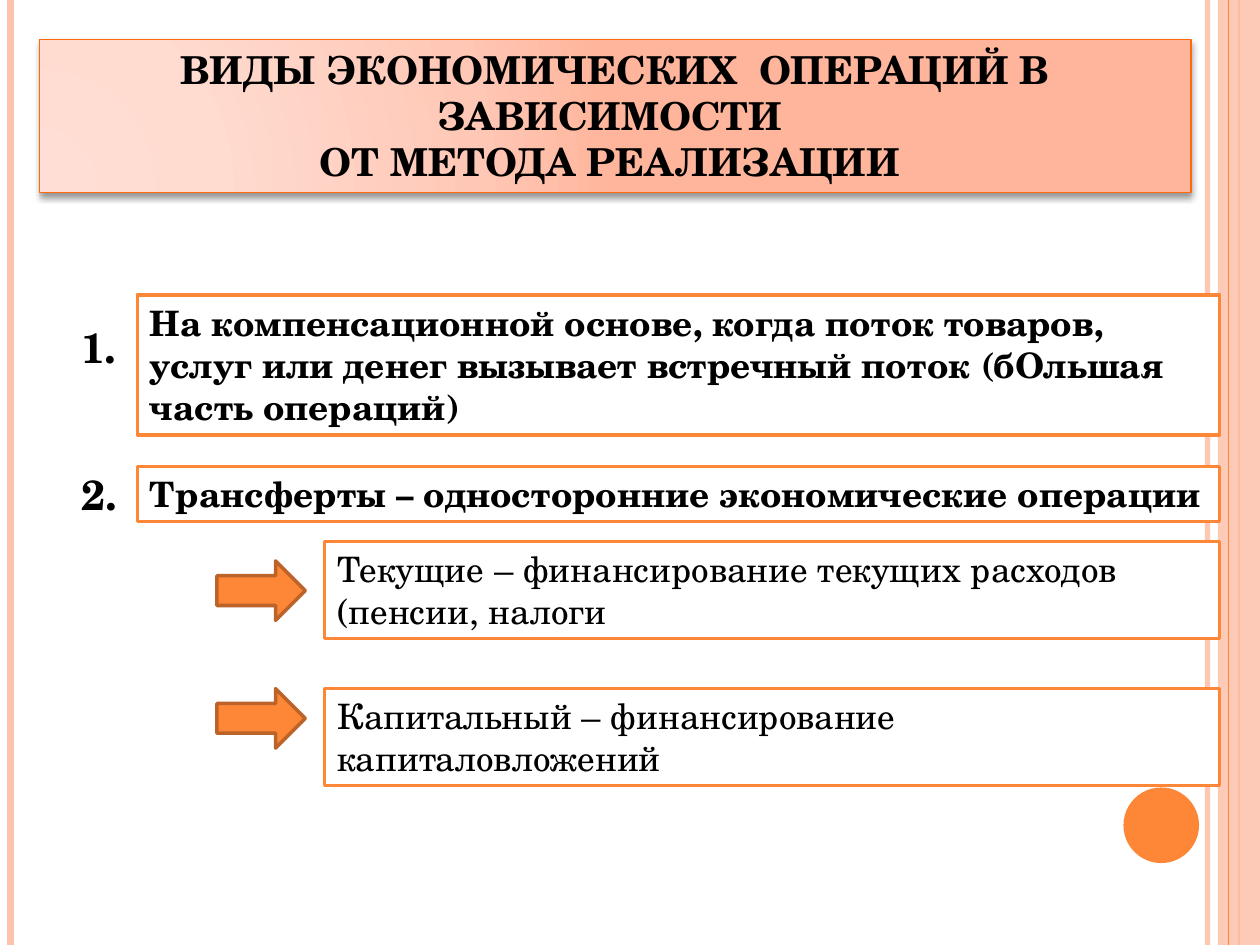
import pptx
import pptx.dml.color
import pptx.enum.shapes
import pptx.enum.text
import pptx.oxml
import pptx.oxml.ns
import pptx.util
from lxml import etree

Pt = pptx.util.Pt
SHAPE = pptx.enum.shapes.MSO_SHAPE
ALIGN = pptx.enum.text.PP_ALIGN
ANCHOR = pptx.enum.text.MSO_ANCHOR
qn = pptx.oxml.ns.qn

FONT = "TeX Gyre Schola"
COLOURS = {
    "text": "000000",
    "box": "FFFFFF",
    "accent": "FE8637",
    "accent dark": "BC6329",
    "stripe": "FEC3AE",
    "title line": "FF6B0A",
}
TITLE_GRADIENT = [(0, "FFDED5"), (30, "FFDBD0"), (75, "FFC8B6"), (100, "FFB59B")]
SLIDE_HEIGHT = 540
BOX_RIGHT = 697


def rgb(name):
    return pptx.dml.color.RGBColor.from_string(COLOURS[name])


def set_alpha(element, percent):
    """Make the first plain colour inside the element partly transparent."""
    colour = element.find(".//" + qn("a:srgbClr"))
    etree.SubElement(colour, qn("a:alpha"), val=str(percent * 1000))


def write_text(shape, text, size, bold=True, align=ALIGN.LEFT, wrap=True):
    frame = shape.text_frame
    frame.text = text
    frame.word_wrap = wrap
    frame.auto_size = pptx.enum.text.MSO_AUTO_SIZE.NONE
    for paragraph in frame.paragraphs:
        paragraph.alignment = align
        for run in paragraph.runs:
            run.font.name = FONT
            run.font.size = Pt(size)
            run.font.bold = bold
            run.font.color.rgb = rgb("text")


def add_stripe(slide, x, width, colour, alpha=None):
    line = slide.shapes.add_connector(
        pptx.enum.shapes.MSO_CONNECTOR.STRAIGHT, Pt(x), Pt(0), Pt(x), Pt(SLIDE_HEIGHT))
    line.line.color.rgb = rgb(colour)
    line.line.width = Pt(width)
    properties = line._element.spPr
    if alpha:
        set_alpha(properties, alpha)
    etree.SubElement(properties, qn("a:effectLst"))


def add_filled_shape(slide, kind, left, top, width, height, fill, line=None):
    shape = slide.shapes.add_shape(kind, Pt(left), Pt(top), Pt(width), Pt(height))
    shape.shadow.inherit = False
    shape.fill.solid()
    shape.fill.fore_color.rgb = rgb(fill)
    if line:
        shape.line.color.rgb = rgb(line)
        shape.line.width = Pt(2)
    else:
        shape.line.fill.background()
    return shape


def add_text_box(slide, left, top, height, text, bold=True):
    """Add an outlined box that runs to the common right edge."""
    box = add_filled_shape(slide, SHAPE.RECTANGLE, left, top, BOX_RIGHT - left, height,
                           "box", "accent")
    box.text_frame.vertical_anchor = ANCHOR.TOP
    write_text(box, text, 20, bold)


def add_number(slide, top, text):
    number = slide.shapes.add_textbox(Pt(39.5), Pt(top), Pt(41), Pt(36))
    write_text(number, text, 24, align=ALIGN.CENTER, wrap=False)


def add_arrow(slide, top):
    add_filled_shape(slide, SHAPE.RIGHT_ARROW, 124, top, 50.5, 34, "accent", "accent dark")


def fill_title_gradient(title):
    title.fill.gradient()
    gradient = title._element.spPr.find(qn("a:gradFill"))
    for child in list(gradient):
        gradient.remove(child)
    stops = etree.SubElement(gradient, qn("a:gsLst"))
    for position, colour in TITLE_GRADIENT:
        stop = etree.SubElement(stops, qn("a:gs"), pos=str(position * 1000))
        etree.SubElement(stop, qn("a:srgbClr"), val=colour)
    circle = etree.SubElement(gradient, qn("a:path"), path="circle")
    etree.SubElement(circle, qn("a:fillToRect"), l="5000", t="100000", r="120000", b="10000")


def add_title_shadow(title):
    effects = etree.SubElement(title._element.spPr, qn("a:effectLst"))
    shadow = etree.SubElement(
        effects, qn("a:outerShdw"), blurRad=str(Pt(4)), dist=str(Pt(2)),
        dir="5400000", rotWithShape="0")
    etree.SubElement(shadow, qn("a:srgbClr"), val="000000")
    set_alpha(effects, 40)


def format_title(title, text):
    title.left, title.top, title.width, title.height = Pt(22.5), Pt(22.5), Pt(658), Pt(87.5)
    fill_title_gradient(title)
    title.line.color.rgb = rgb("title line")
    title.line.width = Pt(1)
    add_title_shadow(title)
    title.text_frame.vertical_anchor = ANCHOR.TOP
    write_text(title, text, 22, align=ALIGN.CENTER)


def add_decoration(slide):
    add_stripe(slide, 690, 3, "stripe", alpha=93)
    add_stripe(slide, 6, 4.5, "stripe")
    add_stripe(slide, 708, 1.5, "accent")
    band = add_filled_shape(slide, SHAPE.RECTANGLE, 696, 0, 24, SLIDE_HEIGHT, "stripe")
    set_alpha(band._element.spPr, 87)
    add_stripe(slide, 702, 0.75, "accent")
    add_filled_shape(slide, SHAPE.OVAL, 642, 450, 43.2, 43.2, "accent")


def main():
    presentation = pptx.Presentation()
    presentation.slide_width = Pt(720)
    presentation.slide_height = Pt(SLIDE_HEIGHT)
    slide = presentation.slides.add_slide(presentation.slide_layouts[5])

    add_decoration(slide)
    format_title(slide.shapes.title,
                 "ВИДЫ ЭКОНОМИЧЕСКИХ  ОПЕРАЦИЙ В ЗАВИСИМОСТИ \nОТ МЕТОДА РЕАЛИЗАЦИИ ")

    add_text_box(slide, 78.5, 168.5, 80,
                 "На компенсационной основе, когда поток товаров, услуг или денег "
                 "вызывает встречный поток (бОльшая часть операций)")
    add_number(slide, 180, "1. ")
    add_text_box(slide, 78.5, 266.5, 31.5,
                 "Трансферты – односторонние экономические операции")
    add_number(slide, 264, "2. ")

    add_arrow(slide, 320.5)
    add_text_box(slide, 185.5, 309.5, 55.5,
                 "Текущие – финансирование текущих расходов (пенсии, налоги", bold=False)
    add_arrow(slide, 393.5)
    add_text_box(slide, 185.5, 393.5, 55.5,
                 "Капитальный – финансирование капиталовложений", bold=False)

    presentation.save("out.pptx")


if __name__ == "__main__":
    main()
